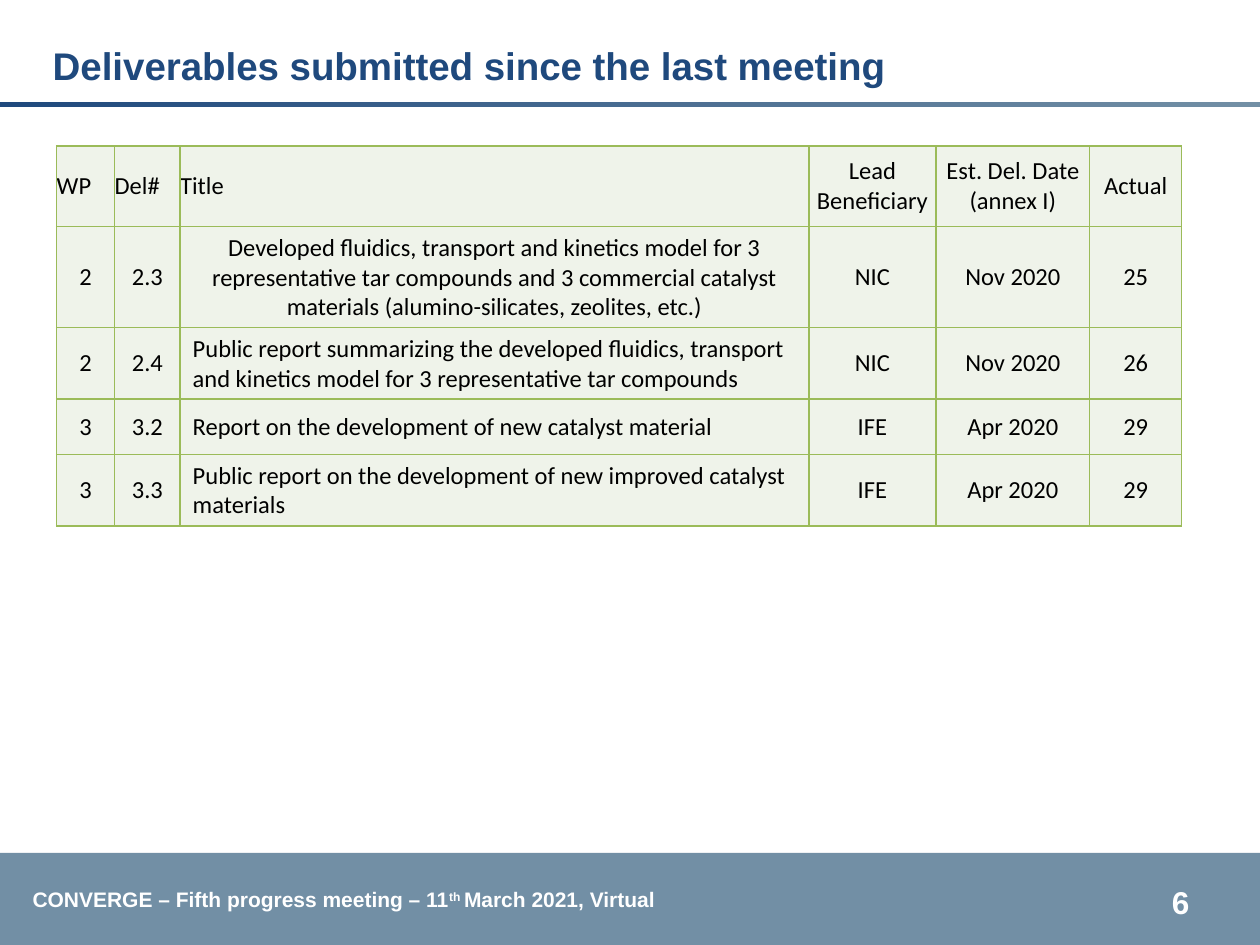
import pptx
import pptx.util
import pptx.dml.color
import pptx.enum.shapes
import pptx.enum.text
from lxml import etree
from pptx.util import Inches, Pt

COLORS = {"navy": "1F497D", "steel": "728FA5", "white": "FFFFFF",
          "black": "000000", "cell": "EFF3EA", "border": "9BBB59"}
ALIGN = pptx.enum.text.PP_ALIGN
ANCHOR = pptx.enum.text.MSO_ANCHOR

COLUMN_WIDTHS = [0.46, 0.52, 4.99, 1.01, 1.22, 0.73]
ROW_HEIGHTS = [0.64] + [0.44] * 4
TITLE_COLUMN, LEAD_COLUMN = 2, 3
DELIVERABLES = [
    ["WP", "Del#", "Title", "Lead Beneficiary", "Est. Del. Date (annex I)", "Actual"],
    ["2", "2.3", "Developed fluidics, transport and kinetics model for 3 representative "
     "tar compounds and 3 commercial catalyst materials (alumino-silicates, zeolites, etc.)",
     "NIC", "Nov 2020", "25"],
    ["2", "2.4", "Public report summarizing the developed fluidics, transport and kinetics "
     "model for 3 representative tar compounds", "NIC", "Nov 2020", "26"],
    ["3", "3.2", "Report on the development of new catalyst material", "IFE", "Apr 2020", "29"],
    ["3", "3.3", "Public report on the development of new improved catalyst materials",
     "IFE", "Apr 2020", "29"],
]


def rgb(name):
    return pptx.dml.color.RGBColor.from_string(COLORS[name])


def style(paragraph, font_name, size, color, bold=False, align=ALIGN.LEFT):
    paragraph.alignment = align
    font = paragraph.font
    font.name, font.size, font.bold = font_name, Pt(size), bold
    font.color.rgb = rgb(color)


def add_bar(slide, left, top, width, height):
    """Add a borderless rectangle and return its fill."""
    bar = slide.shapes.add_shape(pptx.enum.shapes.MSO_SHAPE.RECTANGLE, Inches(left),
                                 Inches(top), Inches(width), Inches(height))
    bar.shadow.inherit = False
    bar.line.fill.background()
    return bar.fill


def add_text(slide, left, top, width, height, runs, size, color, align=ALIGN.LEFT):
    """Add one bold line of text and return its frame."""
    frame = slide.shapes.add_textbox(Inches(left), Inches(top),
                                     Inches(width), Inches(height)).text_frame
    frame.word_wrap = True
    line = frame.paragraphs[0]
    for text in runs:
        line.add_run().text = text
    style(line, "Arial", size, color, True, align)
    return frame


def add_header(slide, left, top, width):
    title = add_text(slide, left + 0.32, top, 9.38, 0.58,
                     ["Deliverables submitted since the last meeting"], 22, "navy")
    title.vertical_anchor = ANCHOR.BOTTOM
    rule = add_bar(slide, left, top + 0.64, width, 0.04)
    rule.gradient()
    rule.gradient_angle = 180
    for stop, position, color in zip(rule.gradient_stops, (0, 1), ("steel", "navy")):
        stop.position = position
        stop.color.rgb = rgb(color)


def add_footer(slide, left, top, width, height):
    band = add_bar(slide, left, top, width, height)
    band.solid()
    band.fore_color.rgb = rgb("steel")
    meeting = add_text(slide, left + 0.16, top + 0.22, 5.21, 0.3,
                       ["CONVERGE – Fifth progress meeting – 11", "th ",
                        "March 2021, Virtual"], 12, "white")
    meeting.word_wrap = False
    meeting.auto_size = pptx.enum.text.MSO_AUTO_SIZE.SHAPE_TO_FIT_TEXT
    ordinal = meeting.paragraphs[0].runs[1]
    ordinal._r.get_or_add_rPr().set("baseline", "30000")
    number = add_text(slide, left + 9.03, top + 0.19, 0.68, 0.36, ["6"], 18, "white",
                      ALIGN.CENTER)
    number.margin_left = number.margin_right = 0


def outline_cell(cell):
    properties = cell._tc.get_or_add_tcPr()
    namespace = "http://schemas.openxmlformats.org/drawingml/2006/main"
    for position, side in enumerate(("lnL", "lnR", "lnT", "lnB")):
        edge = etree.fromstring(
            f'<a:{side} xmlns:a="{namespace}" w="{Pt(1)}"><a:solidFill>'
            f'<a:srgbClr val="{COLORS["border"]}"/></a:solidFill></a:{side}>')
        properties.insert(position, edge)


def cell_alignment(row, column):
    left_header = row == 0 and column <= TITLE_COLUMN
    left_title = row > 1 and column == TITLE_COLUMN
    return ALIGN.LEFT if left_header or left_title else ALIGN.CENTER


def add_deliverables(slide, left, top):
    table = slide.shapes.add_table(
        len(ROW_HEIGHTS), len(COLUMN_WIDTHS), Inches(left), Inches(top),
        Inches(sum(COLUMN_WIDTHS)), Inches(sum(ROW_HEIGHTS))).table
    for column, width in zip(table.columns, COLUMN_WIDTHS):
        column.width = Inches(width)
    for row, height in zip(table.rows, ROW_HEIGHTS):
        row.height = Inches(height)
    for r, texts in enumerate(DELIVERABLES):
        for c, text in enumerate(texts):
            cell = table.cell(r, c)
            cell.text = text
            cell.vertical_anchor = ANCHOR.MIDDLE
            if r == 0 or c not in (TITLE_COLUMN, LEAD_COLUMN):
                cell.margin_left = cell.margin_right = 0
                cell.margin_top = cell.margin_bottom = 0
            cell.fill.solid()
            cell.fill.fore_color.rgb = rgb("cell")
            outline_cell(cell)
            style(cell.text_frame.paragraphs[0], "Calibri", 14, "black",
                  align=cell_alignment(r, c))


def main():
    deck = pptx.Presentation()
    deck.slide_width, deck.slide_height = Inches(10), Inches(7.5)
    slide = deck.slides.add_slide(deck.slide_layouts[6])
    add_footer(slide, 0, 6.77, 10, 0.73)
    add_header(slide, 0, 0.17, 10)
    add_deliverables(slide, 0.45, 1.16)
    deck.save("out.pptx")


if __name__ == "__main__":
    main()
